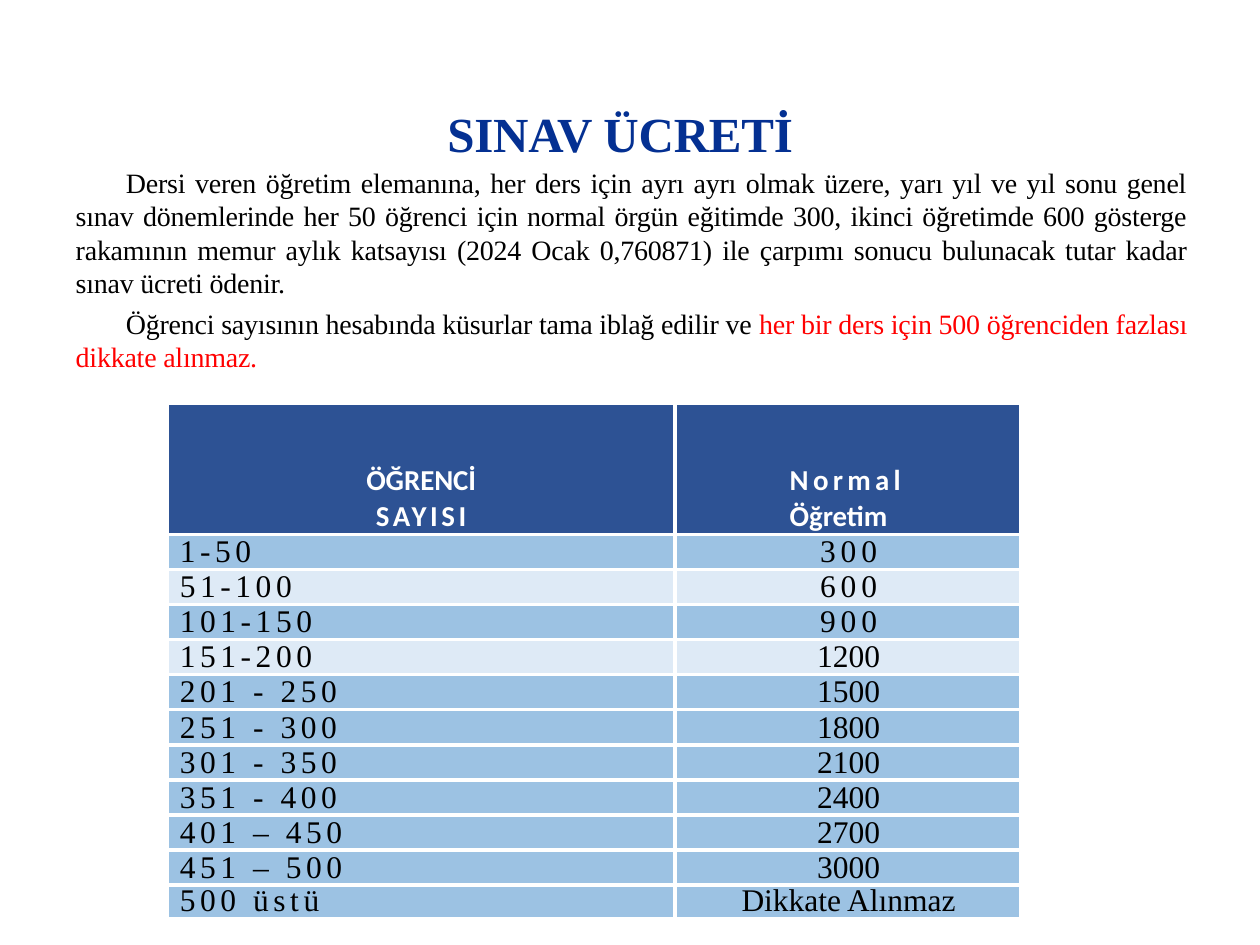
"""Build the exam fee slide with its heading, rules and fee table."""
from dataclasses import dataclass

from lxml import etree
from pptx import Presentation
from pptx.dml.color import RGBColor
from pptx.enum.text import MSO_ANCHOR, PP_ALIGN
from pptx.oxml.ns import qn
from pptx.util import Pt

LEFT, CENTER, JUSTIFY = PP_ALIGN.LEFT, PP_ALIGN.CENTER, PP_ALIGN.JUSTIFY
TOP, MIDDLE, BOTTOM = MSO_ANCHOR.TOP, MSO_ANCHOR.MIDDLE, MSO_ANCHOR.BOTTOM


@dataclass(frozen=True)
class Theme:
    """Colours, fonts and type sizes of the slide."""
    navy: str = "043092"
    head: str = "2D5294"
    mid: str = "9CC2E3"
    pale: str = "DEEAF6"
    white: str = "FFFFFF"
    black: str = "000000"
    red: str = "FF0000"
    serif: str = "Times New Roman"
    sans: str = "Calibri"
    title: float = 28
    body: float = 16
    label: float = 16.5
    value: float = 18


THEME = Theme()
RULES = [
    [("Dersi veren öğretim elemanına, her ders için ayrı ayrı olmak üzere, "
      "yarı yıl ve yıl sonu genel sınav dönemlerinde her 50 öğrenci için "
      "normal örgün eğitimde 300, ikinci öğretimde 600 gösterge rakamının "
      "memur aylık katsayısı (2024 Ocak 0,760871) ile çarpımı sonucu "
      "bulunacak tutar kadar sınav ücreti ödenir.", THEME.black)],
    [("Öğrenci sayısının hesabında küsurlar tama iblağ edilir ve ", THEME.black),
     ("her bir ders için 500 öğrenciden fazlası dikkate alınmaz.", THEME.red)],
]
FEES = [
    ("1-50", "300"), ("51-100", "600"), ("101-150", "900"),
    ("151-200", "1200"), ("201 - 250", "1500"), ("251 - 300", "1800"),
    ("301 - 350", "2100"), ("351 - 400", "2400"), ("401 – 450", "2700"),
    ("451 – 500", "3000"), ("500 üstü", "Dikkate Alınmaz"),
]
PALE_ROWS = (2, 4)


def apply(obj, **values):
    """Set each given attribute on an object."""
    for name, value in values.items():
        setattr(obj, name, value)


def add_run(para, text, size, color, face=THEME.serif, bold=False, gap=0):
    """Add a run with its font and letter gap in points."""
    run = para.add_run()
    run.text = text
    apply(run.font, size=Pt(size), name=face, bold=bold)
    run.font.color.rgb = RGBColor.from_string(color)
    run._r.get_or_add_rPr().set("spc", str(round(gap * 100)))


def set_frame(frame, top):
    """Give a text frame tight margins and top alignment."""
    apply(frame, margin_left=0, margin_right=0, margin_bottom=0,
          margin_top=Pt(top), word_wrap=True, vertical_anchor=TOP)


def add_title(slide):
    """Place and format the heading."""
    title = slide.shapes.title
    apply(title, left=Pt(255.6), top=Pt(56.9), width=Pt(205.2), height=Pt(36))
    set_frame(title.text_frame, 2.5)
    para = title.text_frame.paragraphs[0]
    apply(para, alignment=LEFT, line_spacing=1.0, space_before=Pt(0))
    add_run(para, "SINAV ÜCRETİ", THEME.title, THEME.navy, bold=True, gap=-0.1)


def add_rules(slide):
    """Add the justified fee rules."""
    box = slide.shapes.add_textbox(Pt(42.5), Pt(93.6), Pt(636), Pt(121.7))
    frame = box.text_frame
    set_frame(frame, 0.7)
    for i, parts in enumerate(RULES):
        para = frame.add_paragraph() if i else frame.paragraphs[0]
        apply(para, alignment=JUSTIFY, line_spacing=Pt(19.2),
              space_before=Pt(3.9 if i else 0))
        props = para._p.get_or_add_pPr()
        props.set("marL", str(Pt(0.8)))
        props.set("indent", str(Pt(28.7)))
        for text, color in parts:
            add_run(para, text, THEME.body, color, gap=-0.1)


def set_cell(cell, fill, left=0, anchor=MIDDLE):
    """Format a cell with white borders and a solid fill."""
    apply(cell, margin_left=Pt(left), margin_right=0, margin_top=0,
          margin_bottom=0, vertical_anchor=anchor)
    props = cell._tc.get_or_add_tcPr()
    for side in ("lnL", "lnR", "lnT", "lnB"):
        line = etree.SubElement(props, qn(f"a:{side}"), w=str(Pt(2.25)))
        paint = etree.SubElement(line, qn("a:solidFill"))
        etree.SubElement(paint, qn("a:srgbClr"), val=THEME.white)
    cell.fill.solid()
    cell.fill.fore_color.rgb = RGBColor.from_string(fill)


def add_head(cell, lines, align, left=0):
    """Fill a header cell with two lines of spaced text."""
    set_cell(cell, THEME.head, left, BOTTOM)
    para = cell.text_frame.paragraphs[0]
    apply(para, alignment=align, line_spacing=1.02)
    for i, (text, gap) in enumerate(lines):
        if i:
            para.add_line_break()
        add_run(para, text, THEME.label, THEME.white, THEME.sans, True, gap)


def add_value(cell, text, fill, pitch, align, left, gap):
    """Fill a body cell."""
    set_cell(cell, fill, left, TOP)
    para = cell.text_frame.paragraphs[0]
    apply(para, alignment=align, line_spacing=Pt(pitch))
    add_run(para, text, THEME.value, THEME.black, gap=gap)


def add_fees(slide):
    """Add the table of fee points by student count."""
    count = len(FEES)
    frame = slide.shapes.add_table(
        count + 1, 2, Pt(95.6), Pt(230.6), Pt(487.5), Pt(294))
    table = frame.table
    apply(table, first_row=False, horz_banding=False)
    for column, width in zip(table.columns, (290.2, 197.3)):
        column.width = Pt(width)
    table.rows[0].height = Pt(74.8)
    add_head(table.cell(0, 0), [("ÖĞRENCİ", 0), ("SAYISI", 2.1)], CENTER)
    add_head(table.cell(0, 1), [("Normal", 2.5), ("Öğretim", 0)], LEFT, 65.5)
    for i, (span, fee) in enumerate(FEES, 1):
        pitch = 19.2 if i == count else 20
        table.rows[i].height = Pt(pitch)
        fill = THEME.pale if i in PALE_ROWS else THEME.mid
        add_value(table.cell(i, 0), span, fill, pitch, LEFT, 7.2, 2.6)
        add_value(table.cell(i, 1), fee, fill, pitch, CENTER, 1,
                  2.8 if len(fee) == 3 else 0)


def main():
    """Build and save the slide."""
    deck = Presentation()
    apply(deck, slide_width=Pt(720), slide_height=Pt(540))
    slide = deck.slides.add_slide(deck.slide_layouts[5])
    add_title(slide)
    add_rules(slide)
    add_fees(slide)
    deck.save("out.pptx")


if __name__ == "__main__":
    main()
